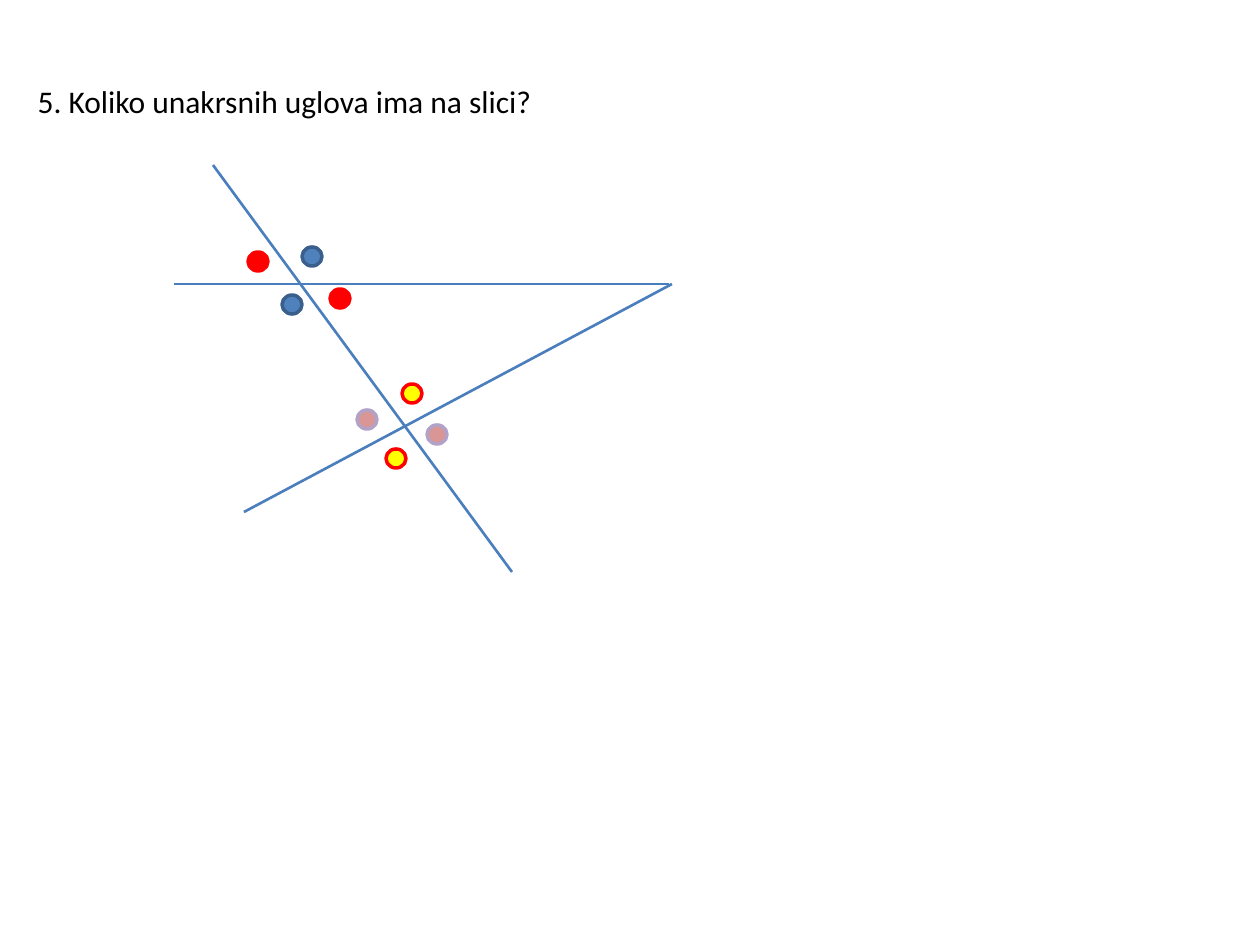
from lxml.etree import SubElement
from pptx import Presentation
from pptx.dml.color import RGBColor
from pptx.enum.shapes import MSO_CONNECTOR, MSO_SHAPE
from pptx.enum.text import MSO_ANCHOR, MSO_AUTO_SIZE, PP_ALIGN
from pptx.oxml.ns import qn
from pptx.util import Pt

PX = 914400 / 126
DOT_WIDTH, DOT_HEIGHT = 20, 19

BLACK = RGBColor(0x00, 0x00, 0x00)
LINE_BLUE = RGBColor(0x4B, 0x7E, 0xBC)
BLUE = RGBColor(0x4F, 0x81, 0xBD)
DARK_BLUE = RGBColor(0x3A, 0x5F, 0x8C)
RED = RGBColor(0xFF, 0x00, 0x00)
YELLOW = RGBColor(0xFF, 0xFF, 0x00)
PINK = RGBColor(0xD9, 0x96, 0x94)
LILAC = RGBColor(0xB3, 0xA2, 0xC7)

# Ends of each line, relative to the figure
LINES = [
    ((0, 119), (495, 119)),
    ((498, 119), (70, 347)),
    ((39, 0), (338, 407)),
]

# Fill, outline and the two places of each pair of opposite angles
ANGLE_PAIRS = [
    (BLUE, DARK_BLUE, [(128, 82), (108, 130)]),
    (RED, RED, [(74, 87), (156, 124)]),
    (YELLOW, RED, [(228, 219), (212, 284)]),
    (PINK, LILAC, [(183, 245), (253, 260)]),
]


def emu(*lengths):
    return [round(length * PX) for length in lengths]


def place_question(slide, left, top, width, height):
    question = slide.shapes.title
    question.left, question.top, question.width, question.height = emu(
        left, top, width, height)
    frame = question.text_frame
    frame.word_wrap = True
    frame.auto_size = MSO_AUTO_SIZE.SHAPE_TO_FIT_TEXT
    frame.vertical_anchor = MSO_ANCHOR.TOP
    paragraph = frame.paragraphs[0]
    paragraph.alignment = PP_ALIGN.LEFT
    run = paragraph.add_run()
    run.text = "5. Koliko unakrsnih uglova ima na slici?"
    run.font.name = "Calibri"
    run.font.size = Pt(18)
    run.font.color.rgb = BLACK


def draw_line(slide, start, end):
    line = slide.shapes.add_connector(
        MSO_CONNECTOR.STRAIGHT, *emu(*start, *end))
    line.line.color.rgb = LINE_BLUE
    line.line.width = Pt(1.5)
    SubElement(line._element.spPr, qn("a:effectLst"))


def draw_dot(slide, left, top, fill, outline):
    dot = slide.shapes.add_shape(
        MSO_SHAPE.FLOWCHART_CONNECTOR, *emu(left, top, DOT_WIDTH, DOT_HEIGHT))
    dot.shadow.inherit = False
    dot.fill.solid()
    dot.fill.fore_color.rgb = fill
    dot.line.color.rgb = outline
    dot.line.width = Pt(2)


def place_angle_figure(slide, left, top):
    for (x1, y1), (x2, y2) in LINES:
        draw_line(slide, (left + x1, top + y1), (left + x2, top + y2))
    for fill, outline, places in ANGLE_PAIRS:
        for x, y in places:
            draw_dot(slide, left + x, top + y, fill, outline)


def main():
    deck = Presentation()
    deck.slide_width, deck.slide_height = emu(1260, 945)
    slide = deck.slides.add_slide(deck.slide_layouts[5])
    place_question(slide, 25, 76, 704, 50)
    place_angle_figure(slide, 174, 165)
    deck.save("out.pptx")


if __name__ == "__main__":
    main()
